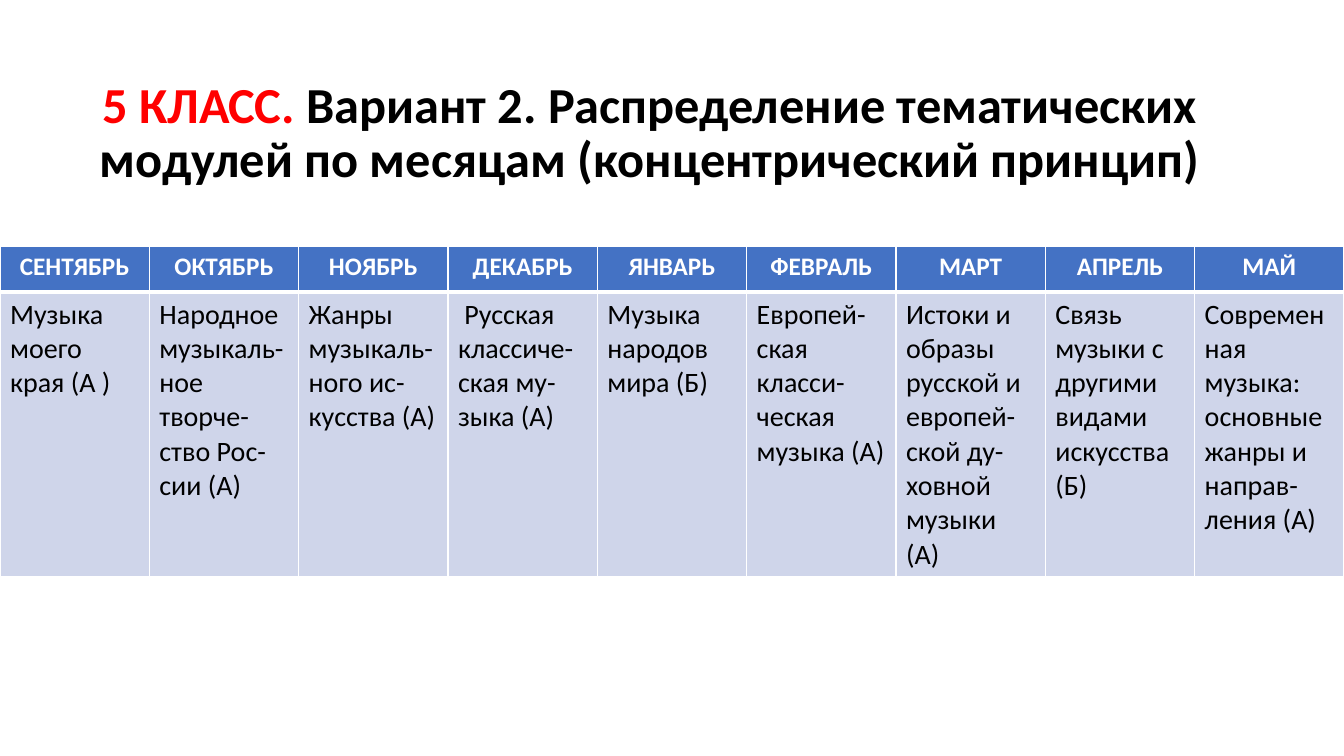
from lxml import etree
from pptx import Presentation, util as u
from pptx.dml.color import RGBColor
from pptx.enum import text
from pptx.oxml.ns import qn

COLORS = {"accent": "FF0000", "ink": "000000", "paper": "FFFFFF",
          "header": "4472C4", "body": "CFD5EA"}

modules_by_month = {
    "СЕНТЯБРЬ": "Музыка моего края (А )",
    "ОКТЯБРЬ": "Народное музыкаль- ное творче- ство Рос- сии (А)",
    "НОЯБРЬ": "Жанры музыкаль- ного ис- кусства (А)",
    "ДЕКАБРЬ": " Русская классиче- ская му- зыка (А)",
    "ЯНВАРЬ": "Музыка народов мира (Б)",
    "ФЕВРАЛЬ": "Европей- ская класси- ческая музыка (А)",
    "МАРТ": "Истоки и образы русской и европей- ской ду- ховной музыки (А)",
    "АПРЕЛЬ": "Связь музыки с другими видами искусства (Б)",
    "МАЙ": "Современная музыка: основные жанры и направ- ления (А)",
}


def write(paragraph, words, size=20, color="ink", bold=False, align=text.PP_ALIGN.LEFT):
    paragraph.alignment = align
    run = paragraph.add_run()
    run.text = words
    run.font.name = "Calibri"
    run.font.size = u.Pt(size)
    run.font.bold = bold
    run.font.color.rgb = RGBColor.from_string(COLORS[color])


def style_cell(cell, fill, bottom):
    for side, width in (("L", 1), ("R", 1), ("T", 1), ("B", bottom)):
        edge = etree.SubElement(cell._tc.get_or_add_tcPr(), qn(f"a:ln{side}"), w=str(u.Pt(width)))
        paint = etree.SubElement(edge, qn("a:solidFill"))
        etree.SubElement(paint, qn("a:srgbClr"), val=COLORS["paper"])
    cell.fill.solid()
    cell.fill.fore_color.rgb = RGBColor.from_string(COLORS[fill])


deck = Presentation()
deck.slide_width, deck.slide_height = u.Inches(13.33), u.Inches(7.5)
slide = deck.slides.add_slide(deck.slide_layouts[5])

heading = slide.shapes.title
heading.left, heading.top = u.Inches(0.47), u.Inches(0.4)
heading.width, heading.height = u.Inches(11.95), u.Inches(1.86)
heading.text_frame.word_wrap = True
heading.text_frame.auto_size = text.MSO_AUTO_SIZE.NONE
heading.text_frame.vertical_anchor = text.MSO_ANCHOR.MIDDLE
heading_line = heading.text_frame.paragraphs[0]
heading_line.line_spacing = 0.9
for words, color in (
    ("5 КЛАСС. ", "accent"),
    ("Вариант 2. Распределение тематических модулей по месяцам (концентрический принцип)", "ink"),
):
    write(heading_line, words, size=36, color=color, bold=True, align=text.PP_ALIGN.CENTER)

year_plan = slide.shapes.add_table(
    2, len(modules_by_month), 0, u.Inches(2.44), deck.slide_width, u.Inches(3.27)).table
year_plan.rows[0].height = u.Inches(0.46)
year_plan.rows[1].height = u.Inches(2.81)

for column, (month, module) in enumerate(modules_by_month.items()):
    year_plan.columns[column].width = deck.slide_width // len(modules_by_month)
    month_cell = year_plan.cell(0, column)
    module_cell = year_plan.cell(1, column)
    style_cell(month_cell, "header", bottom=3)
    style_cell(module_cell, "body", bottom=1)
    write(month_cell.text_frame.paragraphs[0], month, size=18, color="paper",
          bold=True, align=text.PP_ALIGN.CENTER)
    write(module_cell.text_frame.paragraphs[0], module)

deck.save("out.pptx")
